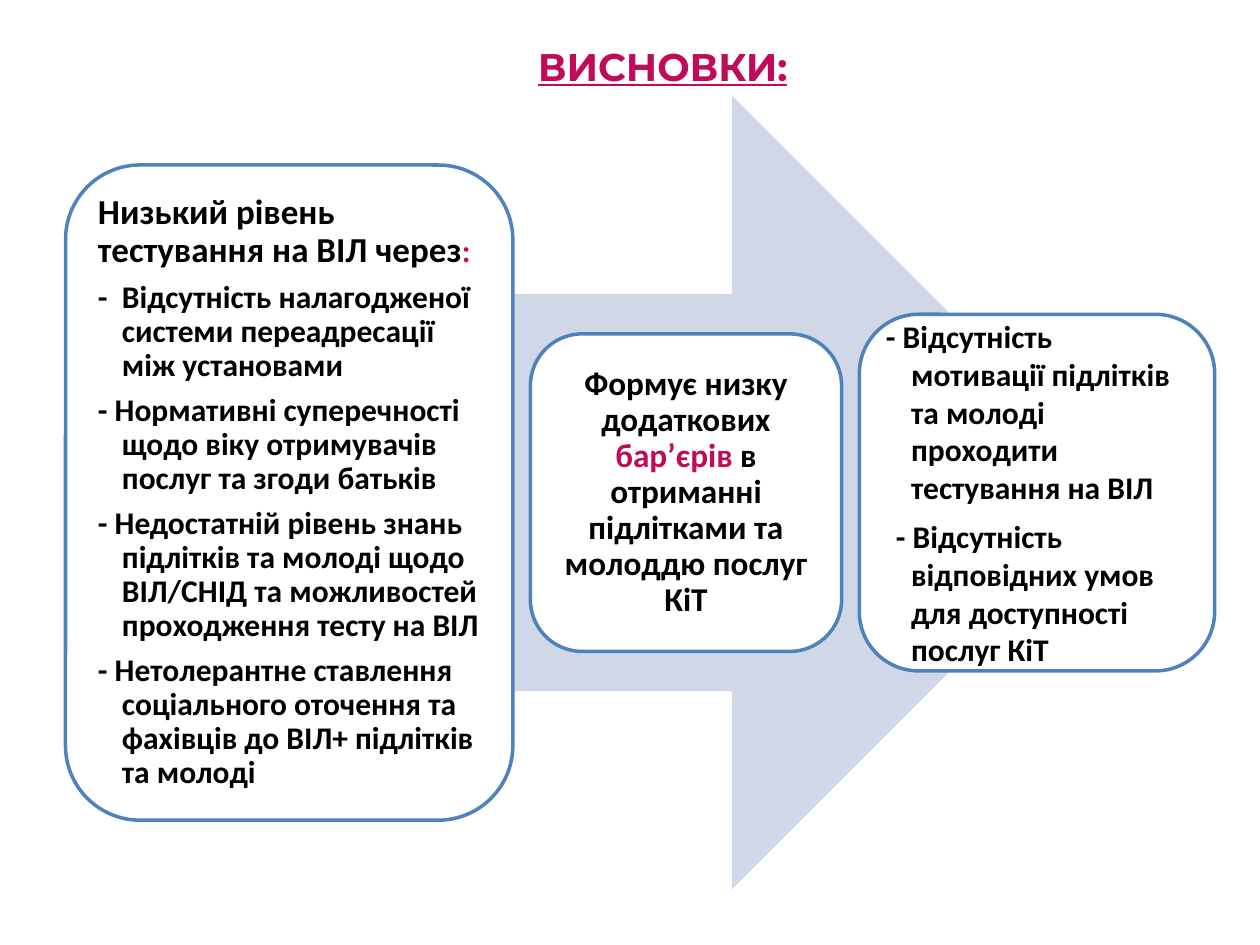
"""Builds the conclusions slide: three cards along a wide arrow."""
from dataclasses import dataclass

from pptx import Presentation
from pptx.dml.color import RGBColor
from pptx.enum.shapes import MSO_SHAPE
from pptx.enum.text import MSO_ANCHOR, MSO_AUTO_SIZE, PP_ALIGN
from pptx.oxml.ns import qn
from pptx.util import Emu, Inches, Pt

ARROW = MSO_SHAPE.RIGHT_ARROW
ROUNDED = MSO_SHAPE.ROUNDED_RECTANGLE
MIDDLE = MSO_ANCHOR.MIDDLE
NO_FIT = MSO_AUTO_SIZE.NONE
LEFT, CENTER = PP_ALIGN.LEFT, PP_ALIGN.CENTER

BLACK = RGBColor(0x00, 0x00, 0x00)
WHITE = RGBColor(0xFF, 0xFF, 0xFF)
CRIMSON = RGBColor(0xBF, 0x0B, 0x58)
BLUE = RGBColor(0x4F, 0x81, 0xBD)
PALE_BLUE = RGBColor(0xD0, 0xD8, 0xE8)

WIDTH, HEIGHT = Inches(10), Inches(7.5)
COLUMNS, ROWS = 1000, 750
AXIS_ROW = 391
CORNER_INSET = 0.05
TWO_CONTENT = 3


@dataclass(frozen=True)
class Box:
    left: float
    top: float
    width: float
    height: float

    def inner(self):
        """Return the area clear of the rounded corners."""
        inset = CORNER_INSET * min(self.width, self.height)
        return Box(self.left + inset, self.top + inset,
                   self.width - 2 * inset, self.height - 2 * inset)

    def emu(self):
        """Return the box in slide units."""
        return (Emu(int(self.left * WIDTH / COLUMNS)), Emu(int(self.top * HEIGHT / ROWS)),
                Emu(int(self.width * WIDTH / COLUMNS)), Emu(int(self.height * HEIGHT / ROWS)))


@dataclass(frozen=True)
class Phrase:
    text: str
    size: float = 18
    color: RGBColor = BLACK
    font: str = "Calibri"
    underline: bool = False


@dataclass(frozen=True)
class Line:
    phrases: tuple[Phrase, ...]
    margin: float = 0
    hanging: float = 0
    spacing: float = 0.9
    align: PP_ALIGN = LEFT
    after: float = 6.3


@dataclass(frozen=True)
class Card:
    box: Box
    lines: tuple[Line, ...]
    padding: float = 0.08


def on_axis(left: float, width: float, height: float) -> Box:
    """Return a box centred on the arrow's axis."""
    return Box(left, AXIS_ROW - height / 2, width, height)


def cause(text: str) -> Line:
    """Return a hanging line of the causes list."""
    return Line((Phrase(text),), 0.19, 0.19)


def effect(text: str, hanging: float) -> Line:
    """Return a hanging line of the effects list."""
    return Line((Phrase(text),), 0.2, hanging, 1)


TITLE_BOX = Box(73, 29, 906, 47)
TITLE = Line((Phrase("ВИСНОВКИ:", 22, CRIMSON, "Montserrat", True),),
             spacing=1, align=CENTER, after=0)
ARROW_BOX = on_axis(120, 776, 630)

CAUSES = Card(on_axis(52, 355, 520), (
    Line((Phrase("Низький рівень тестування на ВІЛ через", 20), Phrase(":", color=CRIMSON))),
    cause("-\tВідсутність налагодженої системи переадресації між установами"),
    cause("- Нормативні суперечності щодо віку отримувачів послуг та згоди батьків"),
    cause("- Недостатній рівень знань підлітків та молоді щодо ВІЛ/СНІД "
          "та можливостей проходження тесту на ВІЛ"),
    cause("- Нетолерантне ставлення соціального оточення та фахівців "
          "до ВІЛ+ підлітків та молоді"),
))
BARRIERS = Card(on_axis(421, 247, 252), (
    Line((Phrase("Формує низку додаткових ", 19), Phrase("бар’єрів ", 19, CRIMSON),
          Phrase("в отриманні підлітками та молоддю послуг КіТ", 19)), align=CENTER),
))
EFFECTS = Card(on_axis(682, 282, 283), (
    effect("- Відсутність мотивації підлітків та молоді проходити тестування на ВІЛ", 0.2),
    effect("- Відсутність відповідних умов для доступності послуг КіТ", 0.12),
), 0.07)


def place(shape, box: Box) -> None:
    """Move a placeholder into a box."""
    shape.left, shape.top, shape.width, shape.height = box.emu()


def write(frame, lines: tuple[Line, ...], padding: float) -> None:
    """Fill a text frame with formatted lines."""
    frame.word_wrap = True
    frame.auto_size = NO_FIT
    frame.vertical_anchor = MIDDLE
    frame.margin_left = frame.margin_right = Inches(padding)
    frame.margin_top = frame.margin_bottom = Inches(padding)
    for index, line in enumerate(lines):
        paragraph = frame.add_paragraph() if index else frame.paragraphs[0]
        paragraph.alignment = line.align
        paragraph.line_spacing = line.spacing
        paragraph.space_before = Pt(0)
        paragraph.space_after = Pt(line.after)
        properties = paragraph._p.get_or_add_pPr()
        properties.set("marL", str(Inches(line.margin)))
        properties.set("indent", str(-Inches(line.hanging)))
        properties.append(properties.makeelement(qn("a:buNone"), {}))
        for phrase in line.phrases:
            run = paragraph.add_run()
            run.text = phrase.text
            run.font.name = phrase.font
            run.font.size = Pt(phrase.size)
            run.font.bold = True
            run.font.underline = phrase.underline
            run.font.color.rgb = phrase.color


def draw_shape(slide, kind: MSO_SHAPE, box: Box, fill: RGBColor):
    """Add a flat preset shape without an outline."""
    shape = slide.shapes.add_shape(kind, *box.emu())
    shape.shadow.inherit = False
    shape.fill.solid()
    shape.fill.fore_color.rgb = fill
    shape.line.fill.background()
    return shape


def draw_card(slide, card: Card, body=None) -> None:
    """Draw a card, with its text in a body placeholder if one is given."""
    panel = draw_shape(slide, ROUNDED, card.box, WHITE)
    panel.line.color.rgb = BLUE
    panel.line.width = Pt(2)
    if body is not None:
        place(body, card.box.inner())
        panel.element.addnext(body.element)
    write((body or panel).text_frame, card.lines, card.padding)


def main() -> None:
    """Build and save the slide."""
    deck = Presentation()
    deck.slide_width, deck.slide_height = WIDTH, HEIGHT
    slide = deck.slides.add_slide(deck.slide_layouts[TWO_CONTENT])
    title, causes_body, effects_body = list(slide.placeholders)[:3]
    place(title, TITLE_BOX)
    write(title.text_frame, (TITLE,), 0.05)
    draw_shape(slide, ARROW, ARROW_BOX, PALE_BLUE)
    draw_card(slide, CAUSES, causes_body)
    draw_card(slide, BARRIERS)
    draw_card(slide, EFFECTS, effects_body)
    deck.save("out.pptx")


if __name__ == "__main__":
    main()
